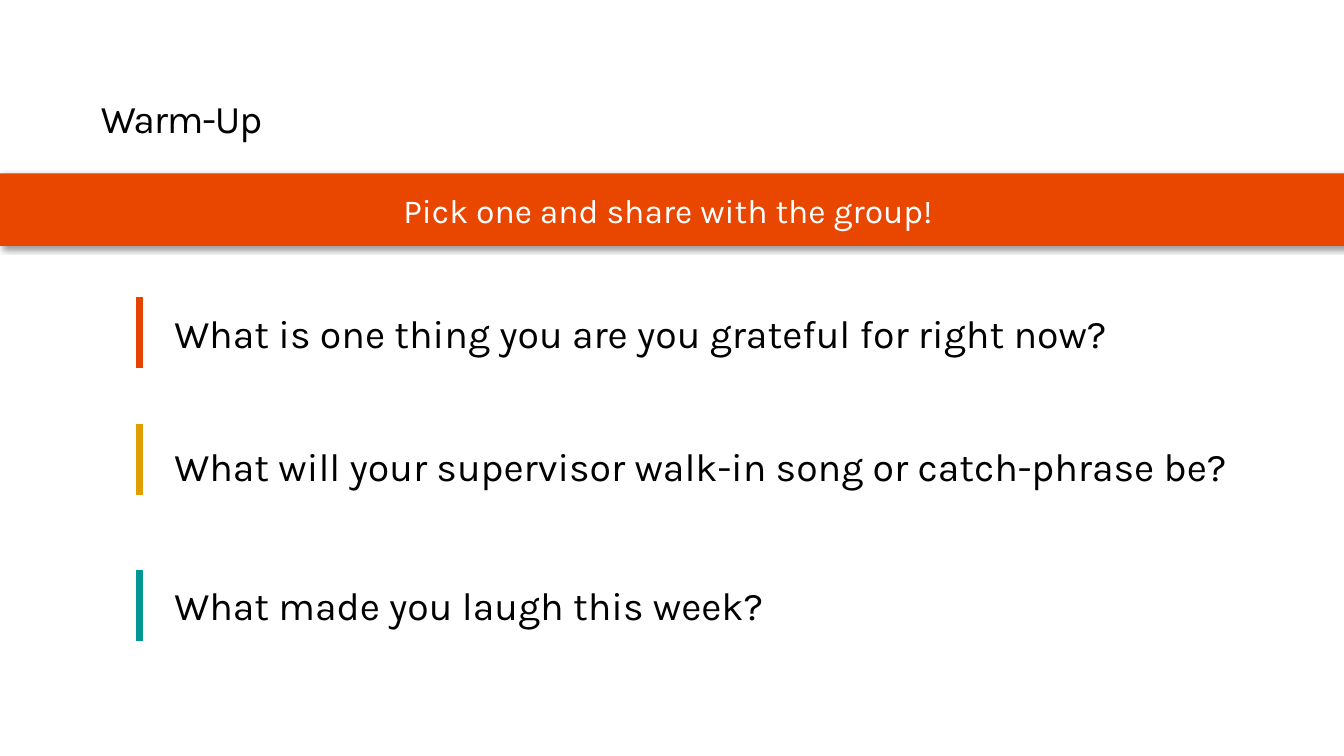
"""Build the warm-up slide with a banner and three questions."""
from lxml import etree
from pptx import Presentation
from pptx.dml.color import RGBColor
from pptx.enum.shapes import MSO_CONNECTOR, MSO_SHAPE
from pptx.enum.text import MSO_ANCHOR, MSO_AUTO_SIZE, PP_ALIGN
from pptx.oxml import parse_xml
from pptx.oxml.ns import nsdecls, qn
from pptx.util import Pt

BLACK = RGBColor(0x00, 0x00, 0x00)
WHITE = RGBColor(0xFF, 0xFF, 0xFF)
BANNER_ORANGE = RGBColor(0xE9, 0x46, 0x00)
ORANGE = RGBColor(0xE4, 0x44, 0x00)
YELLOW = RGBColor(0xE1, 0x9E, 0x00)
TEAL = RGBColor(0x00, 0x96, 0x93)
STRAIGHT = MSO_CONNECTOR.STRAIGHT
RECTANGLE = MSO_SHAPE.RECTANGLE
BOTTOM = MSO_ANCHOR.BOTTOM
MIDDLE = MSO_ANCHOR.MIDDLE
NO_FIT = MSO_AUTO_SIZE.NONE
GROW = MSO_AUTO_SIZE.SHAPE_TO_FIT_TEXT
LEFT = PP_ALIGN.LEFT
CENTER = PP_ALIGN.CENTER
SLIDE_WIDTH = 960
BAR_LEFT = 99.36
BAR_HEIGHT = 50.8
QUESTIONS = [
    ("What is one thing you are you grateful for right now?", ORANGE, 212.4, 217.4, 722.9),
    ("What will your supervisor walk-in song or catch-phrase be?", YELLOW, 303, 312.5, 795.6),
    ("What made you laugh this week?", TEAL, 406.8, 411.8, 743),
]


def write_text(shape, text, size, color, alignment):
    shape.text_frame.text = text
    paragraph = shape.text_frame.paragraphs[0]
    paragraph.alignment = alignment
    font = paragraph.runs[0].font
    font.name = "Karla"
    font.size = Pt(size)
    font.color.rgb = color
    return paragraph


presentation = Presentation()
presentation.slide_width = Pt(SLIDE_WIDTH)
presentation.slide_height = Pt(540)
slide = presentation.slides.add_slide(presentation.slide_layouts[5])

title = slide.shapes.title
title.left, title.top, title.width, title.height = Pt(72), Pt(54.7), Pt(816), Pt(46.8)
title_frame = title.text_frame
title_frame.auto_size = NO_FIT
title_frame.word_wrap = True
title_frame.vertical_anchor = BOTTOM
title_frame.margin_left = title_frame.margin_right = title_frame.margin_bottom = 0
title_frame.margin_top = Pt(3.6)
title_paragraph = write_text(title, "Warm-Up", 28, BLACK, LEFT)
title_paragraph.line_spacing = 0.9
title_paragraph.runs[0].font._element.set("spc", "-80")

banner = slide.shapes.add_shape(RECTANGLE, 0, Pt(123.8), Pt(SLIDE_WIDTH), Pt(51.8))
banner.fill.solid()
banner.fill.fore_color.rgb = BANNER_ORANGE
banner.line.fill.background()
banner.text_frame.vertical_anchor = MIDDLE
write_text(banner, "Pick one and share with the group! ", 24, WHITE, CENTER)
banner._element.spPr.append(parse_xml(
    f'<a:effectLst {nsdecls("a")}>'
    f'<a:outerShdw blurRad="{Pt(4)}" dist="{Pt(3)}" dir="2700000" algn="tl" rotWithShape="0">'
    '<a:srgbClr val="000000"><a:alpha val="40000"/></a:srgbClr>'
    '</a:outerShdw></a:effectLst>'))

for question, color, bar_top, text_top, text_width in QUESTIONS:
    box = slide.shapes.add_textbox(Pt(117.4), Pt(text_top), Pt(text_width), Pt(41))
    box.text_frame.word_wrap = True
    box.text_frame.auto_size = GROW
    write_text(box, question, 28, BLACK, LEFT)

    bar = slide.shapes.add_connector(
        STRAIGHT, Pt(BAR_LEFT), Pt(bar_top), Pt(BAR_LEFT), Pt(bar_top + BAR_HEIGHT))
    bar.line.color.rgb = color
    bar.line.width = Pt(5)
    etree.SubElement(bar._element.spPr, qn("a:effectLst"))

presentation.save("out.pptx")
